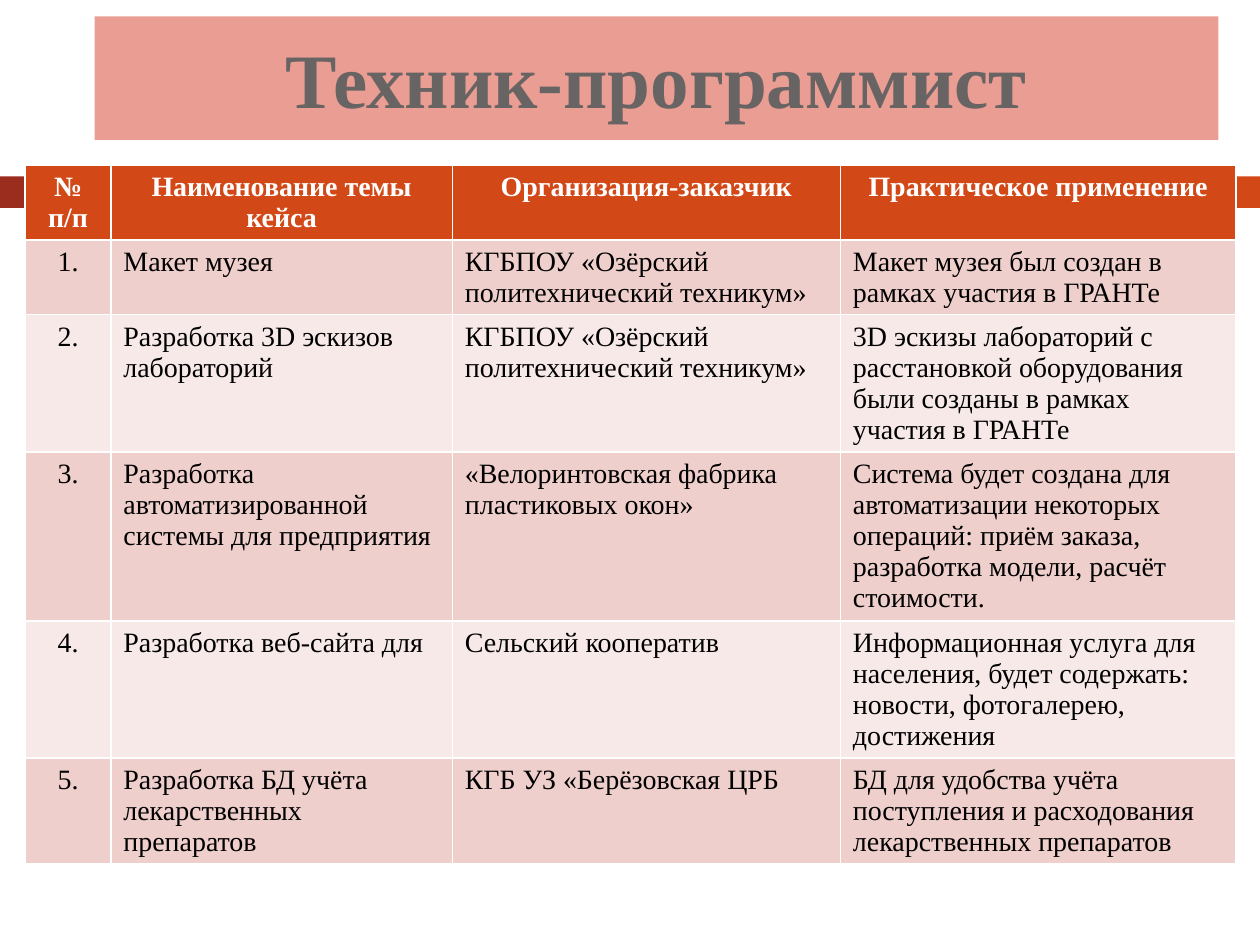
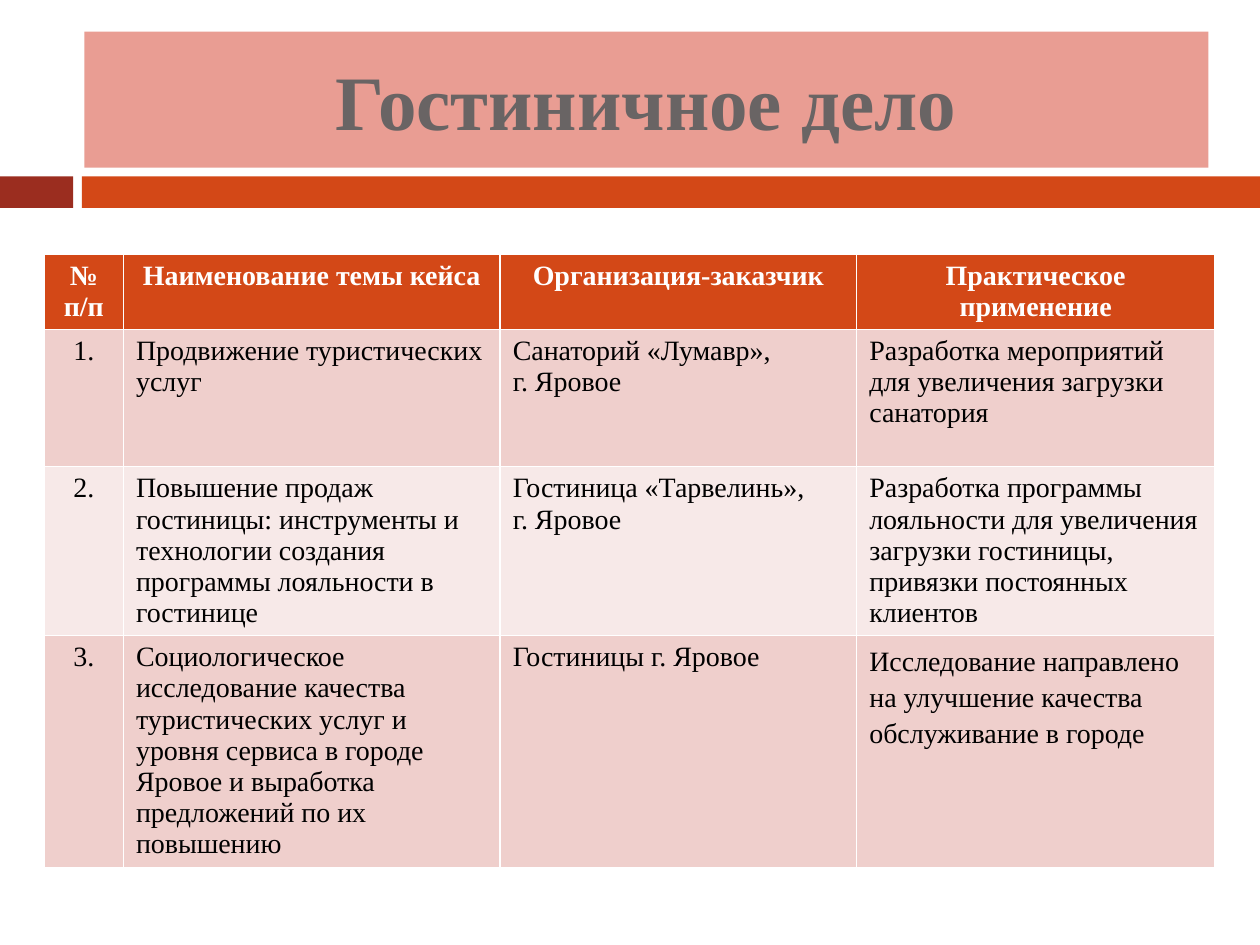
"""Build two slides that list student case projects by profession."""
from pptx import Presentation
from pptx.dml.color import RGBColor
from pptx.enum.shapes import MSO_SHAPE
from pptx.enum.text import MSO_ANCHOR, PP_ALIGN
from pptx.util import Inches, Pt

COLORS = {
    "dark_band": "9B2D1F", "band": "D34817", "title_fill": "E99D93",
    "title": "696464", "header": "FFFFFF", "text": "000000",
    "odd_row": "EFCFCC", "even_row": "F7E9E8",
}
FONT = "Times New Roman"
SLIDE_WIDTH, SLIDE_HEIGHT = 10, 7.5
BAND_TOP, BAND_HEIGHT = 1.4, 0.25
BANDS = [("dark_band", 0, 0.58), ("band", 0.65, SLIDE_WIDTH - 0.65)]
LINE_HEIGHT, ROW_PADDING = 0.25, 0.09

HEADINGS = ("№ п/п", "Наименование темы кейса", "Организация-заказчик",
            "Практическое применение")
COLLEGE = "КГБПОУ «Озёрский политехнический техникум»"

PROFESSIONS = [
    {
        "title": "Техник-программист",
        "title_box": (0.75, 0.13, 8.92, 0.98),
        "table_corner": (0.2, 1.31),
        "columns": (0.68, 2.71, 3.08, 3.14),
        "row_lines": (2, 2, 4, 5, 4, 3),
        "cases": [
            ("Макет музея", COLLEGE,
             "Макет музея был создан в рамках участия в ГРАНТе"),
            ("Разработка 3D эскизов лабораторий", COLLEGE,
             "3D эскизы лабораторий с расстановкой оборудования\n"
             "были созданы в рамках участия в ГРАНТе"),
            ("Разработка автоматизированной системы для предприятия",
             "«Велоринтовская фабрика пластиковых окон»",
             "Система будет создана для автоматизации некоторых операций: "
             "приём заказа, разработка модели, расчёт стоимости."),
            ("Разработка веб-сайта для", "Сельский кооператив",
             "Информационная услуга для населения, будет содержать: "
             "новости, фотогалерею, достижения"),
            ("Разработка БД учёта лекарственных препаратов",
             "КГБ УЗ «Берёзовская ЦРБ",
             "БД для удобства учёта поступления и расходования "
             "лекарственных препаратов"),
        ],
    },
    {
        "title": "Гостиничное дело",
        "title_box": (0.67, 0.25, 8.92, 1.08),
        "table_corner": (0.35, 2.02),
        "columns": (0.63, 2.99, 2.83, 2.84),
        "row_lines": (2, 4, 5, 7),
        "cases": [
            ("Продвижение туристических услуг",
             "Санаторий «Лумавр»,\nг. Яровое",
             "Разработка мероприятий для увеличения загрузки санатория"),
            ("Повышение продаж гостиницы: инструменты и технологии создания "
             "программы лояльности в гостинице",
             "Гостиница «Тарвелинь»,\nг. Яровое",
             "Разработка программы лояльности для увеличения загрузки "
             "гостиницы, привязки постоянных клиентов"),
            ("Социологическое исследование качества туристических услуг и "
             "уровня сервиса в городе Яровое и выработка предложений по их "
             "повышению",
             "Гостиницы г. Яровое",
             "Исследование направлено на улучшение качества обслуживание "
             "в городе"),
        ],
        "loose_cell": (3, 3),
    },
]


def paint(part, color):
    part.fill.solid()
    part.fill.fore_color.rgb = RGBColor.from_string(COLORS[color])


def write(frame, text, size, color, bold=False, align=PP_ALIGN.LEFT, spacing=None):
    for index, line in enumerate(text.split("\n")):
        paragraph = frame.add_paragraph() if index else frame.paragraphs[0]
        paragraph.alignment = align
        paragraph.line_spacing = spacing
        run = paragraph.add_run()
        run.text = line
        run.font.name = FONT
        run.font.size = Pt(size)
        run.font.bold = bold
        run.font.color.rgb = RGBColor.from_string(COLORS[color])


def add_bands(layout, slide):
    for color, left, width in BANDS:
        band = slide.shapes.add_shape(
            MSO_SHAPE.RECTANGLE, Inches(left), Inches(BAND_TOP),
            Inches(width), Inches(BAND_HEIGHT))
        band.shadow.inherit = False
        paint(band, color)
        band.line.fill.background()
        layout.shapes.element.append(band.element)


def add_title(slide, profession):
    title = slide.shapes.title
    title.left, title.top, title.width, title.height = map(
        Inches, profession["title_box"])
    paint(title, "title_fill")
    title.text_frame.vertical_anchor = MSO_ANCHOR.MIDDLE
    write(title.text_frame, profession["title"], 44, "title", True, PP_ALIGN.CENTER)


def add_cases(slide, profession):
    rows = [HEADINGS] + [
        (f"{number}.", *case) for number, case in enumerate(profession["cases"], 1)]
    columns = profession["columns"]
    heights = [lines * LINE_HEIGHT + ROW_PADDING for lines in profession["row_lines"]]
    left, top = profession["table_corner"]
    table = slide.shapes.add_table(
        len(rows), len(columns), Inches(left), Inches(top),
        Inches(sum(columns)), Inches(sum(heights))).table
    for column, width in zip(table.columns, columns):
        column.width = Inches(width)
    for r, (texts, height) in enumerate(zip(rows, heights)):
        table.rows[r].height = Inches(height)
        heading = r == 0
        fill = "band" if heading else "odd_row" if r % 2 else "even_row"
        for c, text in enumerate(texts):
            cell = table.cell(r, c)
            paint(cell, fill)
            write(cell.text_frame, text, 16, "header" if heading else "text", heading,
                  PP_ALIGN.CENTER if heading or c == 0 else PP_ALIGN.LEFT,
                  1.15 if (r, c) == profession.get("loose_cell") else None)


def main():
    deck = Presentation()
    deck.slide_width, deck.slide_height = Inches(SLIDE_WIDTH), Inches(SLIDE_HEIGHT)
    layout = deck.slide_layouts.get_by_name("Title Only")
    for profession in PROFESSIONS:
        slide = deck.slides.add_slide(layout)
        add_title(slide, profession)
        add_cases(slide, profession)
    add_bands(layout, slide)
    deck.save("out.pptx")


if __name__ == "__main__":
    main()
